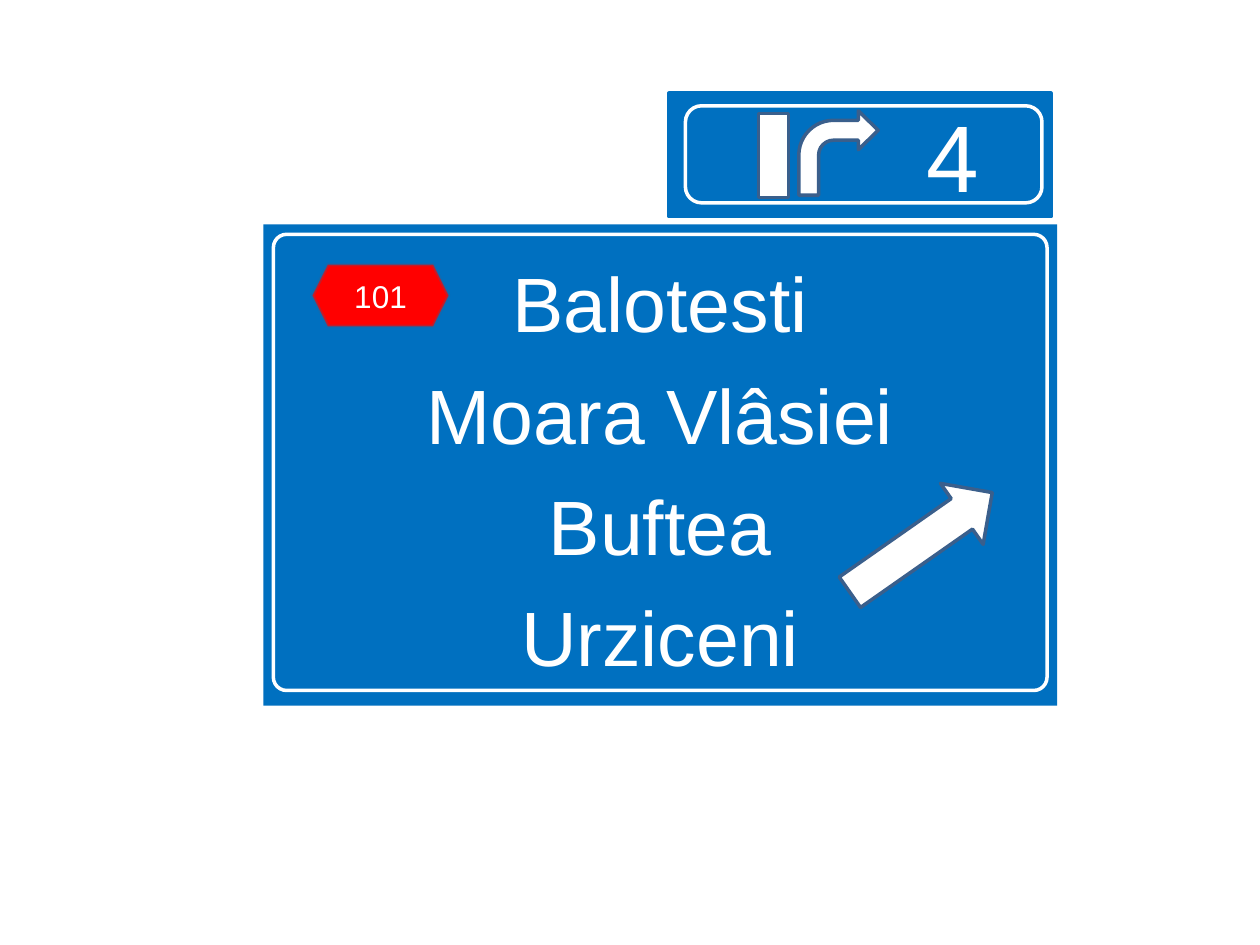
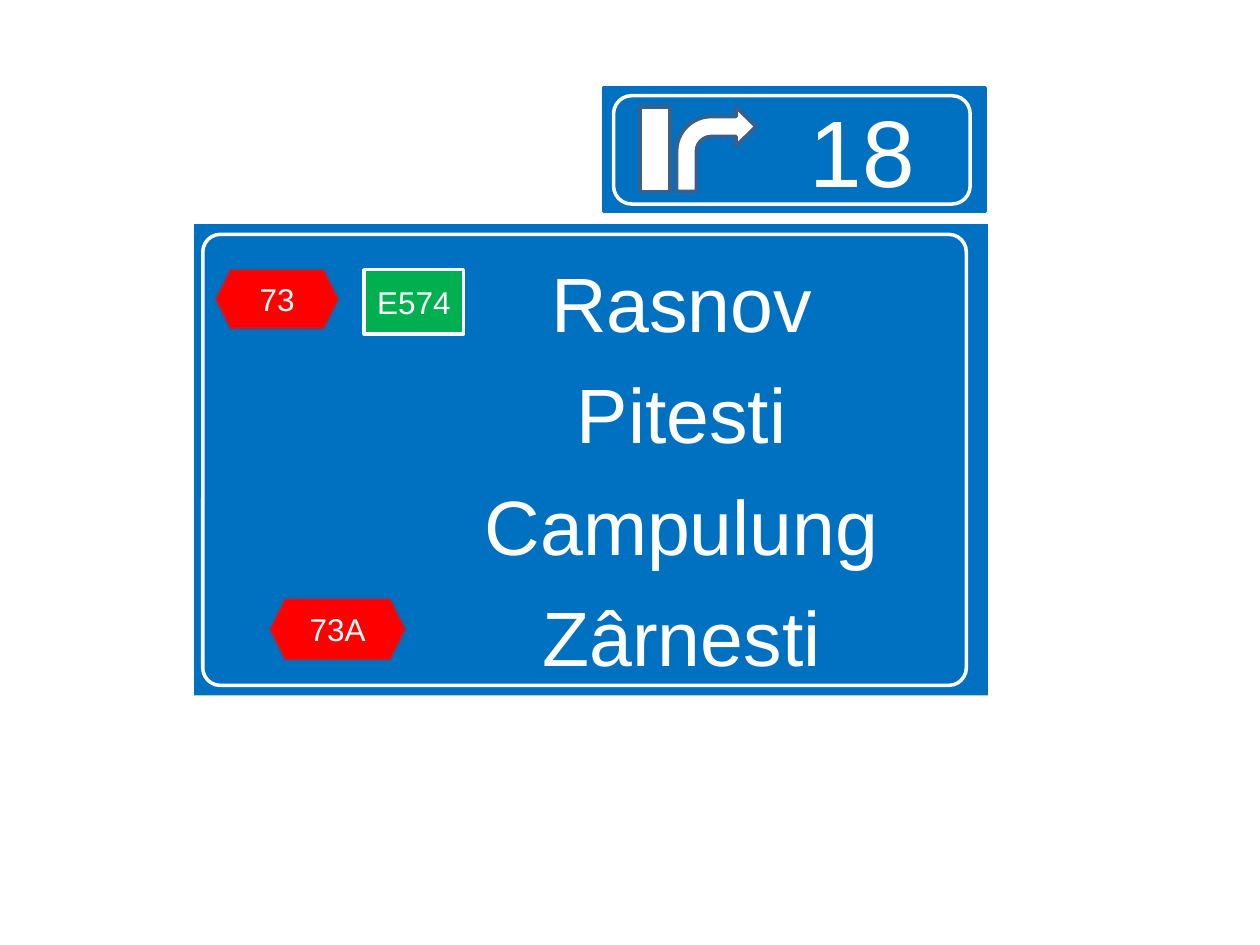
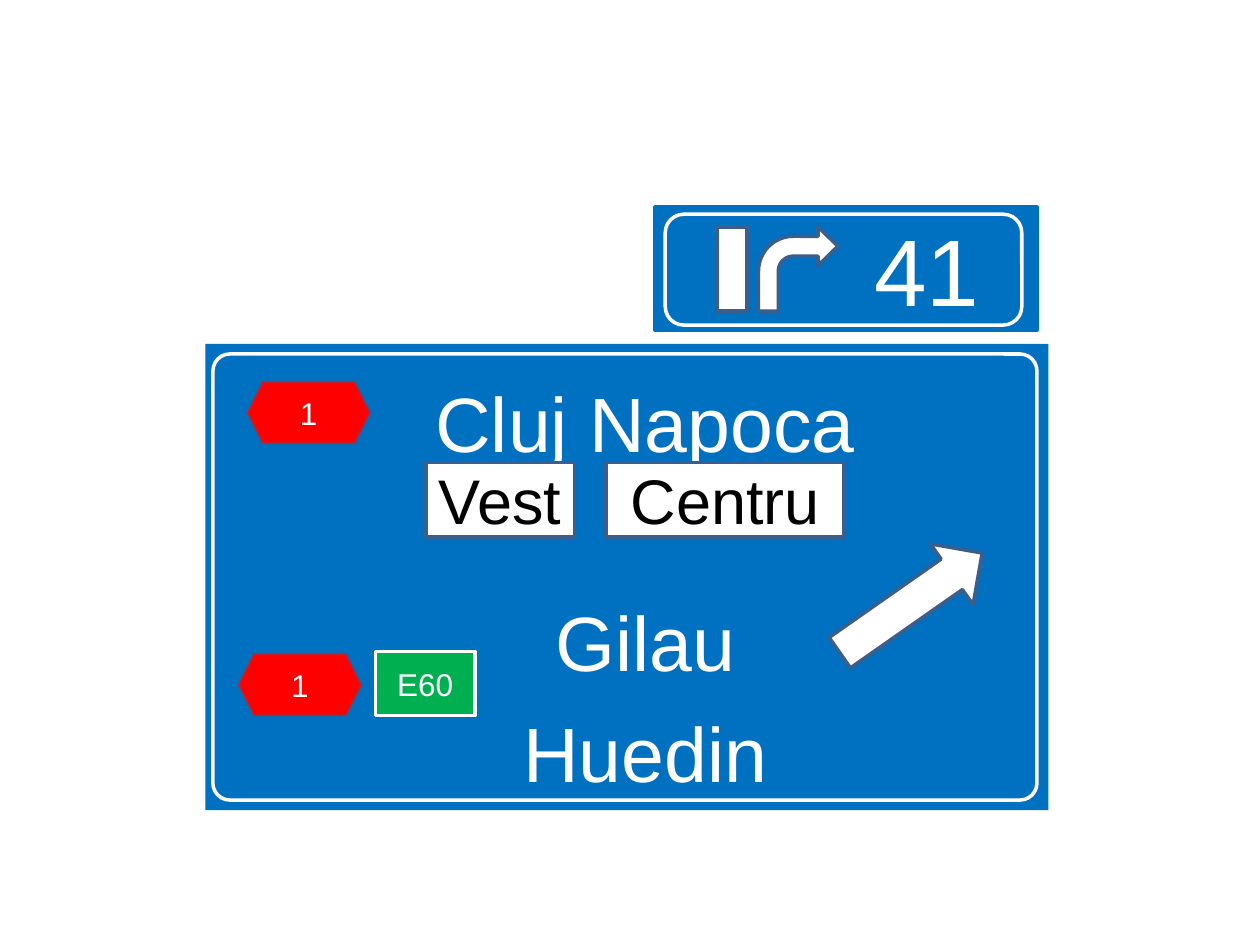
import pptx
import pptx.util
import pptx.dml.color
import pptx.enum.shapes
import pptx.enum.text
import pptx.oxml
import pptx.oxml.ns
from pptx.util import Inches

SHAPE = pptx.enum.shapes.MSO_SHAPE
COLORS = {"sign": "0070C0", "white": "FFFFFF", "black": "000000",
          "national": "FF0000", "european": "00B050", "edge": "3A5F8C"}
FONT = "Arial"
TOWN_SIZE = 44
TOWN_GAP = 10.8
SKIPPED_LINE = 61.4


def rgb(name):
    """Return the named colour."""
    return pptx.dml.color.RGBColor.from_string(COLORS[name])


def add_shape(slide, kind, box, fill=None, line=None, adj=(), rotation=0):
    """Add a preset shape with a flat fill and a 2 pt outline."""
    sp = slide.shapes.add_shape(kind, *(Inches(v) for v in box))
    sp.shadow.inherit = False
    sp.rotation = rotation
    for i, value in enumerate(adj):
        sp.adjustments[i] = value
    if fill:
        sp.fill.solid()
        sp.fill.fore_color.rgb = rgb(fill)
    else:
        sp.fill.background()
    if line:
        sp.line.color.rgb = rgb(line)
        sp.line.width = pptx.util.Pt(2)
    else:
        sp.line.fill.background()
    return sp


def add_text(sp, *lines, size=18, color="white", margins=(0.1, 0.05, 0.1, 0.05),
             anchor="MIDDLE", wrap=True, gaps=()):
    """Write centred lines into a shape, with gaps in points above them."""
    tf = sp.text_frame
    tf.word_wrap = wrap
    tf.vertical_anchor = getattr(pptx.enum.text.MSO_ANCHOR, anchor)
    for side, value in zip(("left", "top", "right", "bottom"), margins):
        setattr(tf, f"margin_{side}", Inches(value))
    for i, text in enumerate(lines):
        p = tf.add_paragraph() if i else tf.paragraphs[0]
        p.alignment = pptx.enum.text.PP_ALIGN.CENTER
        p.space_before = pptx.util.Pt(gaps[i] if gaps else 0)
        r = p.add_run()
        r.text = text
        r.font.name = FONT
        r.font.size = pptx.util.Pt(size)
        r.font.color.rgb = rgb(color)


def add_frame(slide, box, inset, size, radius):
    """Add the white rounded frame inside a sign."""
    add_shape(slide, SHAPE.ROUNDED_RECTANGLE, (box[0] + inset[0], box[1] + inset[1], *size),
              line="white", adj=[radius])


def add_national(slide, x, y, text, w=0.98, h=0.49):
    """Add a red hexagon with a national road number and a faint edge."""
    sp = add_shape(slide, SHAPE.HEXAGON, (x, y, w, h), "national", "edge")
    color = sp.line._get_or_add_ln().find(".//" + pptx.oxml.ns.qn("a:srgbClr"))
    color.append(pptx.oxml.parse_xml(
        f'<a:alpha {pptx.oxml.ns.nsdecls("a")} val="30000"/>'))
    add_text(sp, text, wrap=False)


def add_european(slide, x, y, text):
    """Add a green box with a European road number."""
    sp = add_shape(slide, SHAPE.RECTANGLE, (x, y, 0.79, 0.51), "european", "white")
    add_text(sp, text, wrap=False)


def add_district(slide, x, y, w, text):
    """Add a white box with a part of town."""
    sp = add_shape(slide, SHAPE.RECTANGLE, (x, y, w, 0.59), "white", "edge")
    add_text(sp, text, size=36, color="black", wrap=False)


def add_exit_arrow(slide, x, y):
    """Add the slanted arrow to the exit."""
    add_shape(slide, SHAPE.RIGHT_ARROW, (x, y, 1.38, 0.59), "white", "edge", rotation=325)


def add_town_sign(slide, box, towns, left, frame, skip_before=None):
    """Add the large sign with its towns; one town may leave a line free above it."""
    sp = add_shape(slide, SHAPE.RECTANGLE, box, "sign")
    gaps = [TOWN_GAP if i else 0 for i in range(len(towns))]
    if skip_before is not None:
        gaps[skip_before] += SKIPPED_LINE
    add_text(sp, *towns, size=TOWN_SIZE, margins=(left, 0.25, 0.1, 0.1),
             anchor="TOP", gaps=gaps)
    add_frame(slide, box, *frame)


def add_exit_plate(slide, x, y, number, left, frame, bar, turn):
    """Add the small plate with the exit symbol and its number."""
    box = (x, y, 3.03, 0.98)
    sp = add_shape(slide, SHAPE.ROUNDED_RECTANGLE, box, "sign", "sign", adj=[0])
    add_text(sp, number, size=54, margins=(left, 0.05, 0.1, 0.05))
    inset, height = frame
    add_frame(slide, box, inset, (2.83, height), 0.167)
    add_shape(slide, SHAPE.RECTANGLE, (x + bar[0], y + bar[1], 0.24, 0.67), "white", "edge")
    add_shape(slide, SHAPE.BENT_ARROW, (x + turn[0], y + turn[1], 0.63, 0.67),
              "white", "edge", adj=(0.25, 0.245, 0.25, 0.438))


def build_balotesti(slide):
    """Build the signs of exit 4."""
    x, y = 2.09, 1.78
    add_town_sign(slide, (x, y, 6.3, 3.82),
                  ("Balotesti", "Moara Vlâsiei", "Buftea", "Urziceni"),
                  0.1, ((0.08, 0.08), (6.14, 3.62), 0.029))
    add_exit_arrow(slide, x + 4.53, y + 2.23)
    add_national(slide, x + 0.39, y + 0.32, "101", w=1.08)
    add_exit_plate(slide, 5.31, 0.74, "4", 1.57, ((0.13, 0.1), 0.77),
                   (0.71, 0.16), (1.03, 0.14))


def build_rasnov(slide):
    """Build the signs of exit 18."""
    x, y = 1.54, 1.78
    add_town_sign(slide, (x, y, 6.3, 3.74),
                  ("Rasnov", "Pitesti", "Campulung", "Zârnesti"),
                  1.54, ((0.07, 0.08), (6.06, 3.58), 0.039))
    add_national(slide, x + 0.17, y + 0.36, "73", h=0.47)
    add_national(slide, x + 0.6, y + 2.97, "73A", w=1.08)
    add_european(slide, x + 1.35, y + 0.36, "E574")
    add_exit_plate(slide, 4.79, 0.7, "18", 1.18, ((0.08, 0.06), 0.86),
                   (0.29, 0.15), (0.58, 0.15))


def build_cluj(slide):
    """Build the signs of exit 41."""
    x, y = 1.63, 2.73
    add_town_sign(slide, (x, y, 6.69, 3.7), ("Cluj Napoca", "Gilau", "Huedin"),
                  0.39, ((0.06, 0.08), (6.54, 3.54), 0.038), skip_before=1)
    add_exit_arrow(slide, x + 4.91, y + 1.76)
    add_national(slide, x + 0.33, y + 0.3, "1")
    add_district(slide, x + 1.75, y + 0.94, 1.18, "Vest")
    add_district(slide, x + 3.18, y + 0.94, 1.89, "Centru")
    add_european(slide, x + 1.35, y + 2.44, "E60")
    add_national(slide, x + 0.26, y + 2.46, "1")
    add_exit_plate(slide, 5.2, 1.64, "41", 1.38, ((0.08, 0.06), 0.88),
                   (0.49, 0.16), (0.82, 0.16))


def main():
    """Build and save the presentation."""
    prs = pptx.Presentation()
    prs.slide_width, prs.slide_height = Inches(10), Inches(7.5)
    for build in (build_balotesti, build_rasnov, build_cluj):
        build(prs.slides.add_slide(prs.slide_layouts[6]))
    prs.save("out.pptx")


if __name__ == "__main__":
    main()
